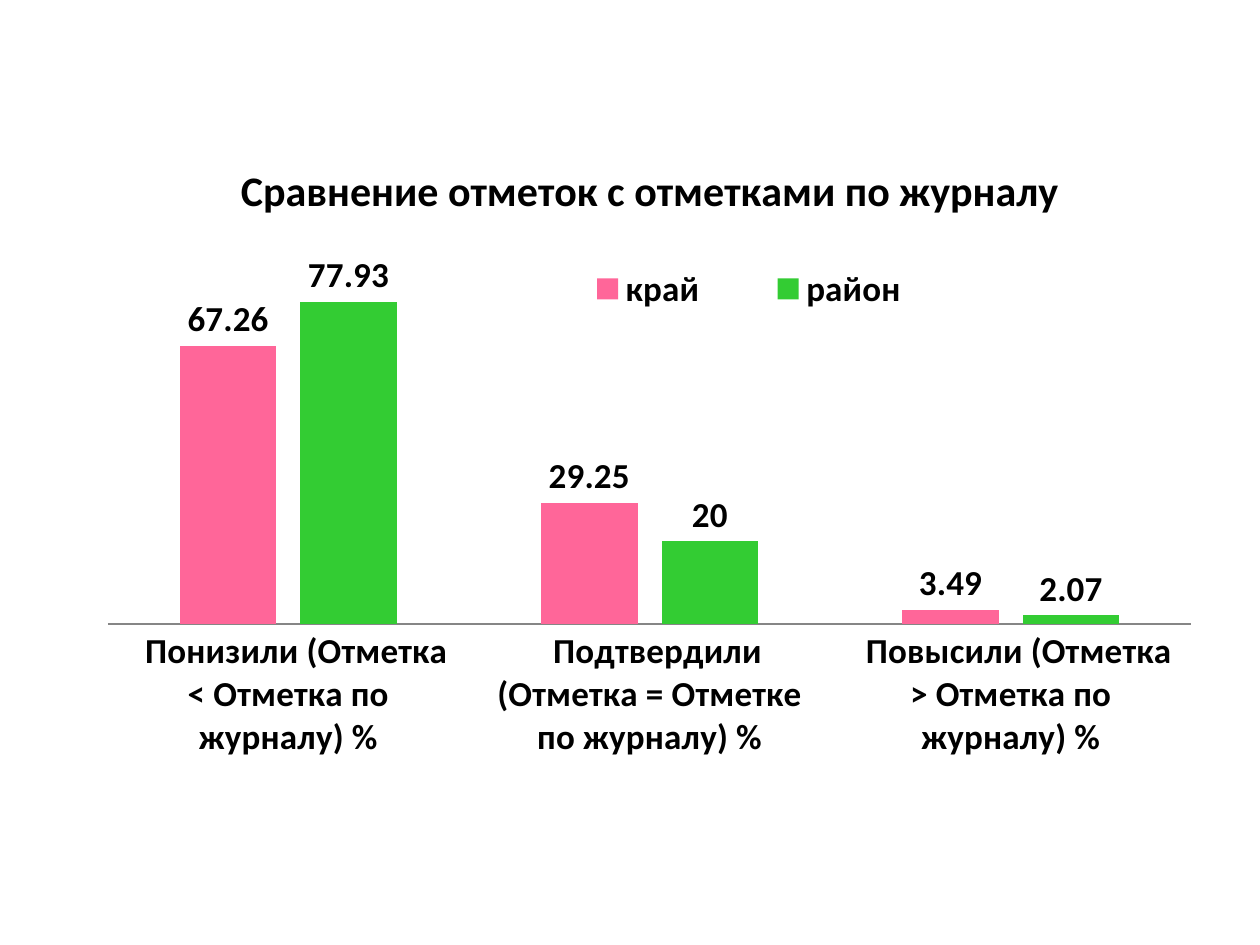
"""Builds a slide with a column chart comparing grades with the class register."""
from lxml import etree
from pptx import Presentation
from pptx import util as u
from pptx.chart import data as cd
from pptx.dml import color
from pptx.enum import chart as ce
from pptx.oxml.ns import qn

COLORS = {"text": "000000", "край": "FF6699", "район": "33CC33", "axis": "868686"}
SERIES = {"край": (67.26, 29.25, 3.49), "район": (77.93, 20, 2.07)}
CATEGORIES = (
    "  Понизили (Отметка < Отметка по журналу) %",
    "  Подтвердили (Отметка = Отметке по журналу) %",
    "  Повысили (Отметка > Отметка по журналу) %",
)


class Deck:
    """Holds the style and the current slide."""

    def __init__(self, prs):
        self.prs = prs
        self.base = {"name": "Calibri", "size": u.Pt(20), "bold": True}
        self.s = prs.slides.add_slide(prs.slide_layouts[6])

    def rgb(self, key):
        """Return the named colour."""
        return color.RGBColor.from_string(COLORS[key])

    def font(self, font, **changes):
        """Apply the base text style with changes."""
        for key, value in {**self.base, **changes}.items():
            setattr(font, key, value)
        font.color.rgb = self.rgb("text")

    def place(self, parent, index, **shares):
        """Give a chart part a fixed place in shares of the chart's size."""
        for old in parent.findall(qn("c:layout")):
            parent.remove(old)
        layout = etree.Element(qn("c:layout"))
        manual = etree.SubElement(layout, qn("c:manualLayout"))
        for key, value in shares.items():
            etree.SubElement(manual, qn(f"c:{key}")).set("val", str(value))
        parent.insert(index, layout)

    def chart(self, x, y, w, h, title):
        """Add the column chart at shares of the slide's size."""
        data = cd.CategoryChartData()
        data.categories = CATEGORIES
        for name, values in SERIES.items():
            data.add_series(name, values)
        width, height = self.prs.slide_width, self.prs.slide_height
        box = [int(share * side) for share, side in
               zip((x, y, w, h), (width, height, width, height))]
        chart = self.s.shapes.add_chart(
            ce.XL_CHART_TYPE.COLUMN_CLUSTERED, *box, data).chart
        self.font(chart.font)
        self.title(chart, title)
        self.axes(chart)
        self.columns(chart.plots[0])
        self.legend(chart)
        area = chart.element.find(f".//{qn('c:plotArea')}")
        self.place(area, 0, layoutTarget="inner", xMode="edge", yMode="edge",
                   x=0.003, y=0.187, w=0.992, h=0.598)

    def title(self, chart, title):
        """Write the chart title."""
        chart.has_title = True
        tf = chart.chart_title.text_frame
        r = tf.paragraphs[0].add_run()
        r.text = title
        self.font(r.font, size=u.Pt(24))
        self.place(chart.element.find(f".//{qn('c:title')}"), 1,
                   xMode="edge", yMode="edge", x=0.118, y=0.032)

    def axes(self, chart):
        """Format the category axis and hide the value axis."""
        axis = chart.category_axis
        axis.major_tick_mark = ce.XL_TICK_MARK.NONE
        axis.format.line.color.rgb = self.rgb("axis")
        axis.format.line.width = u.Pt(0.75)
        self.font(axis.tick_labels.font)
        axis = chart.value_axis
        for key, value in {"minimum_scale": 0, "maximum_scale": 90,
                           "has_major_gridlines": False, "visible": False}.items():
            setattr(axis, key, value)

    def columns(self, plot):
        """Colour the columns and show their values."""
        for key, value in {"gap_width": 150, "overlap": -25,
                           "vary_by_categories": False}.items():
            setattr(plot, key, value)
        for series in plot.series:
            series.format.fill.solid()
            series.format.fill.fore_color.rgb = self.rgb(series.name)
            labels = series.data_labels
            labels.show_value = True
            labels.position = ce.XL_LABEL_POSITION.OUTSIDE_END
            self.font(labels.font)

    def legend(self, chart):
        """Place the legend above the low columns."""
        chart.has_legend = True
        legend = chart.legend
        legend.position = ce.XL_LEGEND_POSITION.TOP
        legend.include_in_layout = False
        self.font(legend.font)
        self.place(chart.element.find(f".//{qn('c:legend')}"), 1,
                   xMode="edge", yMode="edge", x=0.39, y=0.207, w=0.4, h=0.08)


def main():
    """Build and save the slide."""
    prs = Presentation()
    prs.slide_width, prs.slide_height = u.Inches(10), u.Inches(7.5)
    deck = Deck(prs)
    deck.chart(0.083, 0.143, 0.867, 0.66, "Сравнение отметок с отметками по журналу")
    prs.save("out.pptx")


if __name__ == "__main__":
    main()
